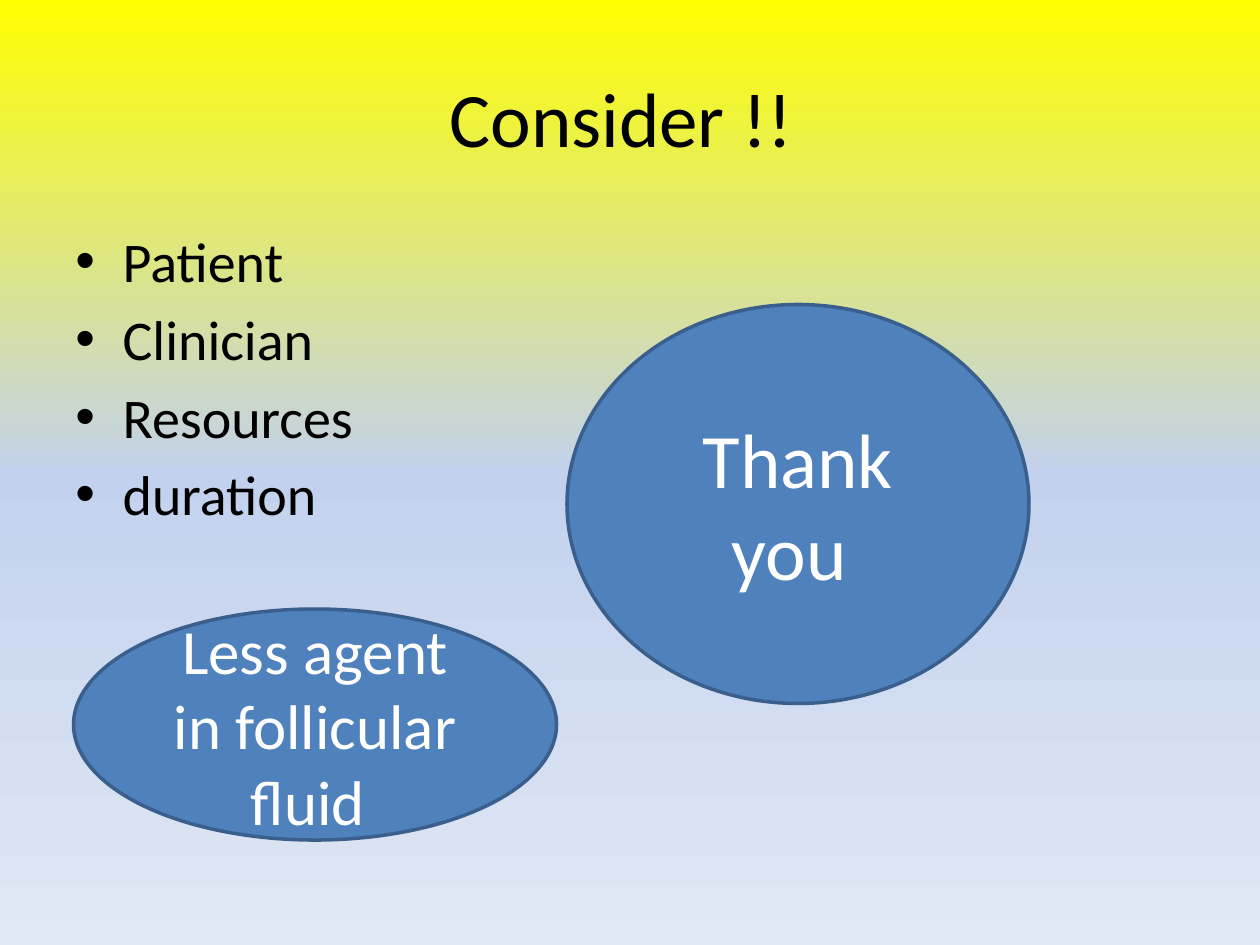
from lxml import etree
from pptx import Presentation
from pptx.dml.color import RGBColor
from pptx.enum.shapes import MSO_SHAPE
from pptx.enum.text import MSO_ANCHOR, PP_ALIGN
from pptx.oxml.ns import qn
from pptx.util import Pt

OVAL = MSO_SHAPE.OVAL
TOP, MIDDLE = MSO_ANCHOR.TOP, MSO_ANCHOR.MIDDLE
LEFT, CENTER = PP_ALIGN.LEFT, PP_ALIGN.CENTER

BLACK = RGBColor(0x00, 0x00, 0x00)
WHITE = RGBColor(0xFF, 0xFF, 0xFF)
BLUE = RGBColor(0x4F, 0x81, 0xBD)
DARK_BLUE = RGBColor(0x3A, 0x5F, 0x8C)
YELLOW = RGBColor(0xFF, 0xFF, 0x00)
SKY = RGBColor(0xC2, 0xD1, 0xED)
PALE = RGBColor(0xE1, 0xE8, 0xF5)


def write(sp, lines, size, color, align, anchor):
    tf = sp.text_frame
    tf.word_wrap = True
    tf.vertical_anchor = anchor
    for i, line in enumerate(lines):
        p = tf.paragraphs[0] if i == 0 else tf.add_paragraph()
        p.alignment = align
        r = p.add_run()
        r.text = line
        font = {"name": "Calibri", "size": Pt(size)}
        for name, value in font.items():
            setattr(r.font, name, value)
        r.font.color.rgb = color
    return tf


prs = Presentation()
prs.slide_width, prs.slide_height = Pt(720), Pt(540)
s = prs.slides.add_slide(prs.slide_layouts[6])

# Background: three-stop gradient from top to bottom
fill = s.background.fill
fill.gradient()
fill.gradient_angle = 270
stops = s.element.find(".//" + qn("a:gsLst"))
for stop in list(stops):
    stops.remove(stop)
for percent, color in [(0, YELLOW), (50, SKY), (100, PALE)]:
    stop = etree.SubElement(stops, qn("a:gs"), pos=str(percent * 1000))
    etree.SubElement(stop, qn("a:srgbClr"), val=str(color))

# Title
sp = s.shapes.add_textbox(Pt(36), Pt(21.6), Pt(648), Pt(90))
write(sp, ["Consider !! "], 44, BLACK, CENTER, MIDDLE)

# Bullet list
sp = s.shapes.add_textbox(Pt(36), Pt(126), Pt(648), Pt(356.4))
tf = write(sp, ["Patient", "Clinician", "Resources", "duration"],
           32, BLACK, LEFT, TOP)
for p in tf.paragraphs:
    p.space_before = Pt(6)
    pPr = p._p.get_or_add_pPr()
    pPr.set("marL", str(Pt(27)))
    pPr.set("indent", str(-Pt(27)))
    etree.SubElement(pPr, qn("a:buFont"), typeface="Arial")
    etree.SubElement(pPr, qn("a:buChar"), char="•")

# Ellipses
ellipses = [
    ("Thank you ", 44, (324, 174, 264, 228)),
    ("Less agent in follicular fluid ", 36, (42, 348, 276, 132)),
]
for text, size, box in ellipses:
    sp = s.shapes.add_shape(OVAL, *map(Pt, box))
    sp.shadow.inherit = False
    sp.fill.solid()
    sp.fill.fore_color.rgb = BLUE
    sp.line.color.rgb = DARK_BLUE
    sp.line.width = Pt(2)
    write(sp, [text], size, WHITE, CENTER, MIDDLE)

prs.save("out.pptx")
